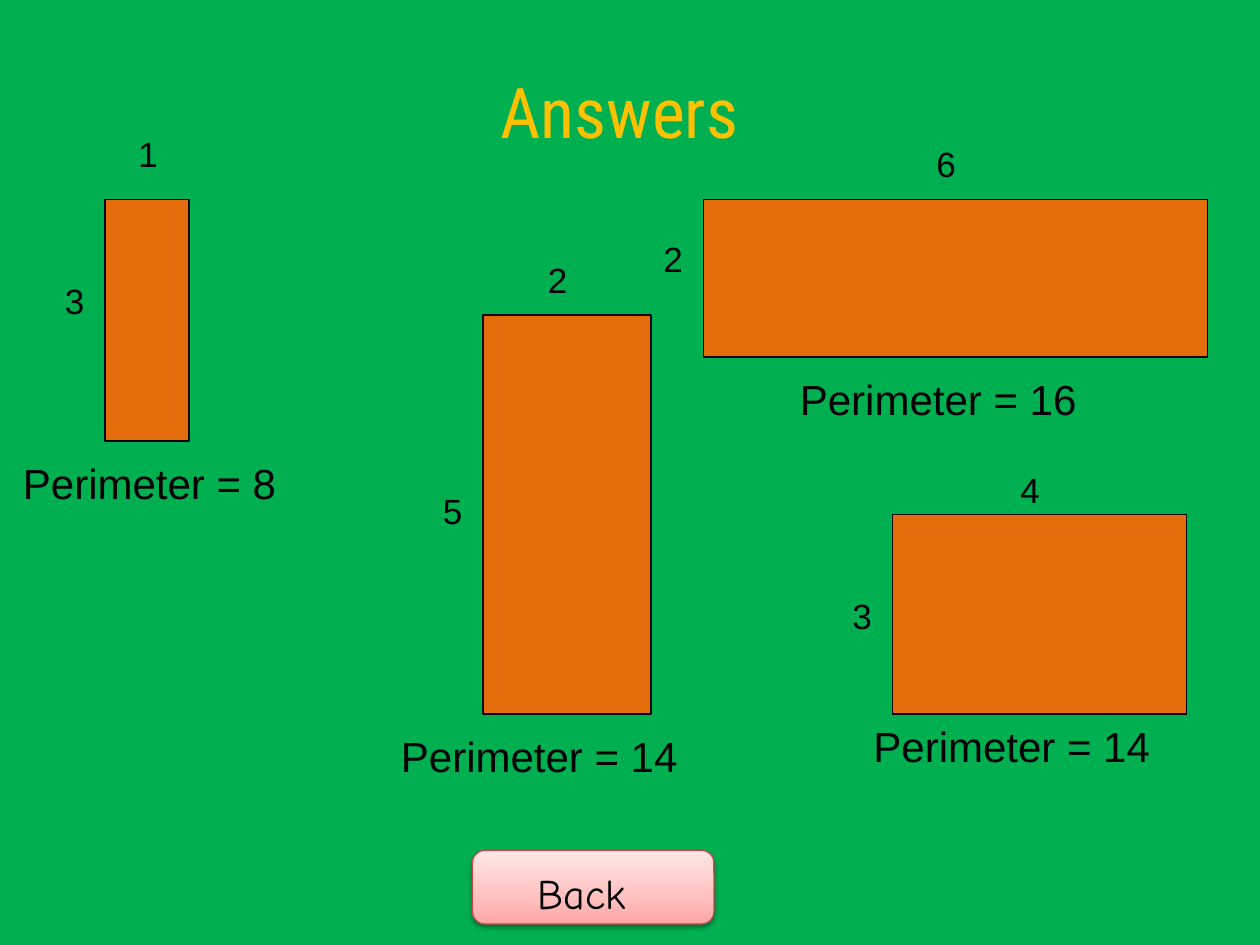
"""Build the answers slide with four labelled rectangles and their perimeters."""
import copy

import pptx
import pptx.dml.color
import pptx.enum.shapes
import pptx.enum.text
import pptx.oxml
import pptx.oxml.ns
import pptx.util

Pt = pptx.util.Pt
SHAPE = pptx.enum.shapes.MSO_SHAPE


def paint(color, value):
    color.rgb = pptx.dml.color.RGBColor.from_string(value)


def add_label(shapes, text, left, top, width, height, size, font="Arial", wrap=True):
    label = shapes.add_textbox(Pt(left), Pt(top), Pt(width), Pt(height))
    label.text_frame.word_wrap = wrap
    label.text_frame.auto_size = pptx.enum.text.MSO_AUTO_SIZE.SHAPE_TO_FIT_TEXT
    paragraph = label.text_frame.paragraphs[0]
    paragraph.text = text
    paragraph.font.name = font
    paragraph.font.size = Pt(size)
    paint(paragraph.font.color, "000000")


presentation = pptx.Presentation()
presentation.slide_width = Pt(720)
presentation.slide_height = Pt(540)
slide = presentation.slides.add_slide(presentation.slide_layouts[5])

backdrop = slide.shapes.add_shape(SHAPE.RECTANGLE, 0, 0, Pt(720), Pt(540))
backdrop.shadow.inherit = False
backdrop.fill.solid()
paint(backdrop.fill.fore_color, "00B050")
backdrop.line.fill.background()
slide.shapes.title._element.addprevious(backdrop._element)

title = slide.shapes.title
title.left, title.top, title.width, title.height = Pt(126), Pt(18), Pt(456), Pt(90)
title.text_frame.vertical_anchor = pptx.enum.text.MSO_ANCHOR.MIDDLE
heading = title.text_frame.paragraphs[0]
heading.text = "Answers"
heading.alignment = pptx.enum.text.PP_ALIGN.CENTER
heading.font.name = "Roboto Condensed"
heading.font.size = Pt(40)
paint(heading.font.color, "FFC000")

rectangles = [
    (1, 3, (60, 114, 48, 138), (72, 72), 156, (6, 258, 162)),
    (4, 3, (510, 294, 168, 114), (576, 264), 336, (492, 408, 192)),
    (2, 5, (276, 180, 96, 228), (306, 144), 276, (222, 414, 192)),
    (6, 2, (402, 114, 288, 90), (528, 78), 132, (450, 210, 192)),
]
for across, down, box, across_at, down_top, answer_at in rectangles:
    figure = slide.shapes.add_group_shape().shapes
    rectangle = figure.add_shape(SHAPE.RECTANGLE, *map(Pt, box))
    rectangle.shadow.inherit = False
    rectangle.fill.solid()
    paint(rectangle.fill.fore_color, "E46C0A")
    rectangle.line.width = Pt(0.75)
    paint(rectangle.line.color, "000000")
    for number, (left, top) in ((across, across_at), (down, (box[0] - 30, down_top))):
        add_label(figure, str(number), left, top, 26, 31.5, 20, wrap=False)
    add_label(slide.shapes, f"Perimeter = {2 * (across + down)}", *answer_at, 36, 24)

back = slide.shapes.add_group_shape().shapes
button = back.add_shape(SHAPE.ROUNDED_RECTANGLE, Pt(270), Pt(486), Pt(138), Pt(42))
button.line.width = Pt(0.75)
paint(button.line.color, "BF4C48")
button.fill.gradient()
button.fill.gradient_angle = 90
first_stop = button._element.spPr.find(".//" + pptx.oxml.ns.qn("a:gs"))
first_stop.addnext(copy.deepcopy(first_stop))
shades = [(0, "FFA6A5"), (0.35, "FFC0BF"), (1, "FFE7E7")]
for stop, (position, shade) in zip(button.fill.gradient_stops, shades):
    stop.position = position
    paint(stop.color, shade)
button._element.spPr.append(pptx.oxml.parse_xml(
    f'<a:effectLst {pptx.oxml.ns.nsdecls("a")}>'
    f'<a:outerShdw blurRad="{Pt(3.1)}" dist="{Pt(1.6)}" dir="5400000" rotWithShape="0">'
    '<a:srgbClr val="000000"><a:alpha val="38000"/></a:srgbClr>'
    '</a:outerShdw></a:effectLst>'))
add_label(back, "Back", 300, 492, 96, 36, 24, font="Comic Neue")

presentation.save("out.pptx")
